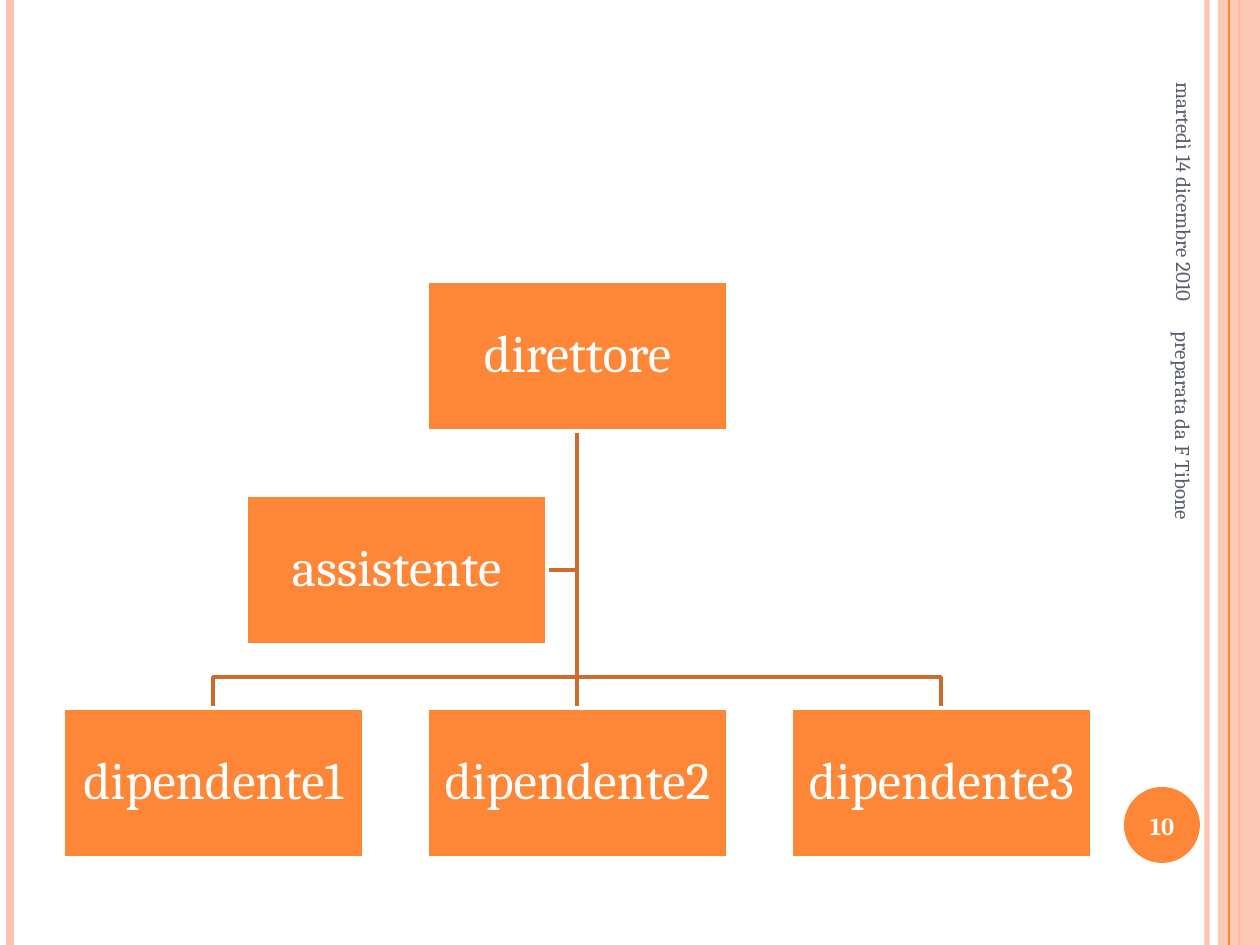
import pptx
import pptx.dml.color
import pptx.enum.shapes
import pptx.enum.text
import pptx.oxml
import pptx.oxml.ns
import pptx.util

RGBColor = pptx.dml.color.RGBColor
ORANGE = RGBColor(0xFE, 0x86, 0x37)
PEACH = RGBColor(0xFE, 0xC3, 0xAE)
BROWN = RGBColor(0xCB, 0x6B, 0x2C)
WHITE = RGBColor(0xFF, 0xFF, 0xFF)
SLATE = RGBColor(0x57, 0x5F, 0x6D)

SHAPES = pptx.enum.shapes.MSO_SHAPE
ALIGN = pptx.enum.text.PP_ALIGN
SCALE = 914400 / 126
FULL_WIDTH, FULL_HEIGHT = 1260, 945
BOX_WIDTH, BOX_HEIGHT = 301, 150


def px(length):
    """Turn px into EMU."""
    return pptx.util.Emu(round(length * SCALE))


class SlideBuilder:
    """Hold the style and the slide that is being drawn."""

    font = "Cambria"

    def __init__(self, slide):
        self.slide = slide

    def set_alpha(self, properties, percent):
        """Make the first solid colour in the properties translucent."""
        color = properties.find(".//" + pptx.oxml.ns.qn("a:srgbClr"))
        alpha = pptx.oxml.parse_xml(
            f'<a:alpha {pptx.oxml.ns.nsdecls("a")} val="{percent * 1000}"/>')
        color.append(alpha)

    def rule(self, x, color, width, alpha=100):
        """Draw a vertical line over the whole slide height."""
        line = self.slide.shapes.add_connector(
            pptx.enum.shapes.MSO_CONNECTOR.STRAIGHT, px(x), 0, px(x), px(FULL_HEIGHT))
        line.line.color.rgb = color
        line.line.width = pptx.util.Pt(width)
        properties = line._element.spPr
        if alpha < 100:
            self.set_alpha(properties, alpha)
        properties.append(pptx.oxml.parse_xml(
            f'<a:effectLst {pptx.oxml.ns.nsdecls("a")}/>'))

    def shape(self, kind, left, top, width, height, color, alpha=100):
        """Draw a filled preset shape without an outline."""
        shape = self.slide.shapes.add_shape(
            kind, px(left), px(top), px(width), px(height))
        shape.shadow.inherit = False
        shape.fill.solid()
        shape.fill.fore_color.rgb = color
        shape.line.fill.background()
        if alpha < 100:
            self.set_alpha(shape._element.spPr, alpha)
        return shape

    def branch(self, points):
        """Draw an open line through the points."""
        start, *rest = points
        builder = self.slide.shapes.build_freeform(*start, scale=SCALE)
        builder.add_line_segments(rest, close=False)
        shape = builder.convert_to_shape()
        shape.shadow.inherit = False
        shape.fill.background()
        shape.line.color.rgb = BROWN
        shape.line.width = pptx.util.Pt(2)

    def add_text(self, shape, text, size, color, align, bold=False):
        """Add one run of text, centred vertically in the shape."""
        frame = shape.text_frame
        frame.word_wrap = True
        frame.vertical_anchor = pptx.enum.text.MSO_ANCHOR.MIDDLE
        paragraph = frame.paragraphs[0]
        paragraph.alignment = align
        run = paragraph.add_run()
        run.text = text
        run.font.name = self.font
        run.font.size = pptx.util.Pt(size)
        run.font.bold = bold
        run.font.color.rgb = color
        return paragraph

    def role(self, text, left, top):
        """Draw one box of the organisation chart."""
        shape = self.shape(SHAPES.RECTANGLE, left, top, BOX_WIDTH, BOX_HEIGHT, ORANGE)
        shape.line.color.rgb = WHITE
        shape.line.width = pptx.util.Pt(2)
        frame = shape.text_frame
        frame.margin_left = frame.margin_right = px(2)
        frame.margin_top = frame.margin_bottom = px(2)
        paragraph = self.add_text(shape, text, 30, WHITE, ALIGN.CENTER)
        paragraph.line_spacing = 0.9

    def label(self, text, left, top, width, height, size, color, align,
              rotation=0, bold=False):
        """Place a text box."""
        box = self.slide.shapes.add_textbox(px(left), px(top), px(width), px(height))
        box.rotation = rotation
        self.add_text(box, text, size, color, align, bold)


def main():
    """Build the organisation chart slide."""
    presentation = pptx.Presentation()
    presentation.slide_width = px(FULL_WIDTH)
    presentation.slide_height = px(FULL_HEIGHT)
    slide = presentation.slides.add_slide(presentation.slide_layouts[6])
    builder = SlideBuilder(slide)

    builder.rule(1207, PEACH, 3, alpha=93)
    builder.rule(10, PEACH, 4.5)
    builder.rule(1239, ORANGE, 1.5)
    builder.shape(SHAPES.RECTANGLE, 1218, 0, 42, FULL_HEIGHT, PEACH, alpha=87)
    builder.rule(1229, ORANGE, 0.75)
    builder.shape(SHAPES.OVAL, 1124, 787, 76, 76, ORANGE)

    employee_lefts = [63 + 364 * index for index in range(3)]
    director_left, director_top = employee_lefts[1], 281
    assistant_left, assistant_top = 246, 495
    employee_top, junction_y = 708, 677
    trunk_x = director_left + BOX_WIDTH // 2
    trunk = (trunk_x, director_top + BOX_HEIGHT)
    assistant_y = assistant_top + BOX_HEIGHT // 2

    builder.branch([trunk, (trunk_x, assistant_y),
                    (assistant_left + BOX_WIDTH, assistant_y)])
    for left in employee_lefts:
        center = left + BOX_WIDTH // 2
        builder.branch([trunk, (trunk_x, junction_y), (center, junction_y),
                        (center, employee_top)])

    builder.role("direttore", director_left, director_top)
    for number, left in enumerate(employee_lefts, 1):
        builder.role(f"dipendente{number}", left, employee_top)
    builder.role("assistente", assistant_left, assistant_top)

    builder.label("martedì 14 dicembre 2010", 1046, 149, 277, 53, 12, SLATE,
                  ALIGN.RIGHT, rotation=90)
    builder.label("10", 1120, 790, 84, 72, 14, WHITE, ALIGN.CENTER, bold=True)
    builder.label("preparata da F Tibone", 963, 515, 441, 50, 12, SLATE,
                  ALIGN.LEFT, rotation=90)
    presentation.save("out.pptx")


if __name__ == "__main__":
    main()
